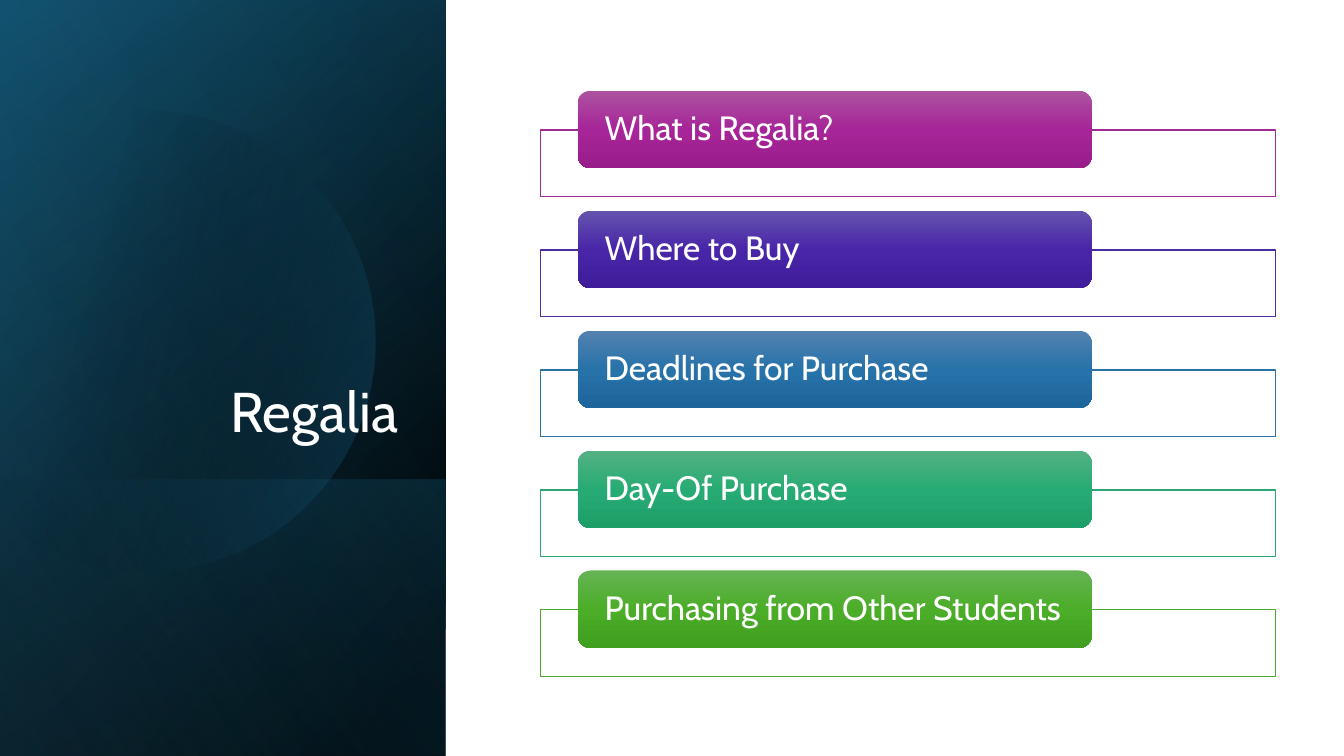
from lxml import etree
from pptx import Presentation
from pptx.dml.color import RGBColor
from pptx.enum.shapes import MSO_SHAPE as Shape
from pptx.enum.text import MSO_ANCHOR as Anchor, PP_ALIGN as Align
from pptx.oxml import parse_xml
from pptx.oxml.ns import nsdecls, qn
from pptx.util import Inches, Pt

FONT = "Cabin"
WHITE = RGBColor(0xFF, 0xFF, 0xFF)
BLACK = RGBColor(0, 0, 0)
TEAL = RGBColor(0x15, 0x60, 0x82)
DARK_TEAL = RGBColor(0x10, 0x48, 0x62)
SKY = RGBColor(0x46, 0xB1, 0xE1)

TITLE = "Regalia"

# Topic, frame colour, card gradient from top to bottom
TOPICS = [
    ("What is Regalia?", "A02B93", ("AC53A0", "A62598", "991C8B")),
    ("Where to Buy", "4B2CA2", ("6553AE", "4926A8", "3E1C9A")),
    ("Deadlines for Purchase", "2C71A4", ("5382AF", "2772A9", "1D669C")),
    ("Day-Of Purchase", "2DA573", ("54B183", "27AB74", "1E9E68")),
    ("Purchasing from Other Students", "4EA72E", ("66B354", "4BAD28", "409F1E")),
]

# Side panel layers: box, gradient stops (position %, colour, opacity %), angle
PANEL = (-1.54, 1.54, 7.5, 4.42)
PANEL_FOOT = (0.84, 3.92, 2.74, 4.42)
LAYERS_BELOW = [
    (PANEL, [(8, BLACK, 100), (100, DARK_TEAL, 100)], 50),
    (PANEL, [(0, BLACK, 0), (99, TEAL, 46)], 30),
    (PANEL_FOOT, [(2, TEAL, 29), (100, BLACK, 30)], 130),
]
LAYERS_ABOVE = [(PANEL, [(0, BLACK, 0), (99, SKY, 11)], 120)]

# Disc outline: start, then curves (three points) and lines (one point)
DISC_START = (1.49, 1.1)
DISC_SEGMENTS = [
    [(2.46, 1.12), (3.35, 1.77), (3.63, 2.75)],
    [(3.98, 3.97), (3.28, 5.23), (2.07, 5.58)],
    [(1.31, 5.8), (0.53, 5.61), (-0.03, 5.14)],
    [(-0.15, 5.03)],
    [(-0.15, 1.75)],
    [(0, 1.61)],
    [(0.23, 1.42), (0.5, 1.28), (0.8, 1.19)],
    [(1.03, 1.13), (1.26, 1.1), (1.49, 1.1)],
]
DISC_STOPS = [(29, BLACK, 0), (100, TEAL, 43)]
DISC_ANGLE = 14
CURVE_STEPS = 24

# Topic list geometry
FRAME_LEFT, FRAME_TOP, FRAME_WIDTH, FRAME_HEIGHT = 5.36, 1.29, 7.29, 0.66
CARD_LEFT, CARD_WIDTH, CARD_HEIGHT = 5.73, 5.1, 0.77
CARD_RISE = 0.39
PITCH = 1.19


def set_gradient(shape, stops, angle):
    shape.fill.background()
    marks = "".join(
        f'<a:gs pos="{pos * 1000}"><a:srgbClr val="{color}">'
        f'<a:alpha val="{opacity * 1000}"/></a:srgbClr></a:gs>'
        for pos, color, opacity in stops)
    gradient = parse_xml(
        f'<a:gradFill {nsdecls("a")} rotWithShape="1"><a:gsLst>{marks}</a:gsLst>'
        f'<a:lin ang="{angle * 60000}" scaled="0"/></a:gradFill>')
    properties = shape._element.spPr
    properties.replace(properties.find(qn("a:noFill")), gradient)
    shape.line.fill.background()
    shape.shadow.inherit = False


def add_box(slide, kind, box):
    shape = slide.shapes.add_shape(kind, *(Inches(v) for v in box))
    shape.shadow.inherit = False
    return shape


def add_layers(slide, layers):
    for box, stops, angle in layers:
        layer = add_box(slide, Shape.RECTANGLE, box)
        layer.rotation = 90
        layer._element.spPr.find(qn("a:xfrm")).set("flipH", "1")
        set_gradient(layer, stops, angle)


def bezier(p0, p1, p2, p3, t):
    u = 1 - t
    return tuple(u**3 * a + 3 * u * u * t * b + 3 * u * t * t * c + t**3 * d
                 for a, b, c, d in zip(p0, p1, p2, p3))


def add_disc(slide):
    points = [DISC_START]
    for segment in DISC_SEGMENTS:
        if len(segment) == 1:
            points += segment
        else:
            start = points[-1]
            points += [bezier(start, *segment, step / CURVE_STEPS)
                       for step in range(1, CURVE_STEPS + 1)]
    outline = [(Inches(x), Inches(y)) for x, y in points]
    builder = slide.shapes.build_freeform(*outline[0])
    builder.add_line_segments(outline[1:], close=True)
    set_gradient(builder.convert_to_shape(), DISC_STOPS, DISC_ANGLE)


def add_title(slide):
    title = slide.shapes.title
    title.left, title.top = Inches(0.64), Inches(1.84)
    title.width, title.height = Inches(3.41), Inches(2.62)
    frame = title.text_frame
    frame.text = TITLE
    frame.vertical_anchor = Anchor.BOTTOM
    style_text(frame.paragraphs[0], 40, Align.RIGHT)
    # Bring the title in front of the panel
    slide.shapes._spTree.append(title._element)


def style_text(paragraph, size, align):
    paragraph.alignment = align
    paragraph.line_spacing = 0.9
    paragraph.font.name = FONT
    paragraph.font.size = Pt(size)
    paragraph.font.color.rgb = WHITE


def add_topic(slide, index, topic, frame_color, card_colors):
    top = FRAME_TOP + index * PITCH
    frame = add_box(slide, Shape.RECTANGLE,
                    (FRAME_LEFT, top, FRAME_WIDTH, FRAME_HEIGHT))
    frame.fill.solid()
    frame.fill.fore_color.rgb = WHITE
    white = frame._element.spPr.find(qn("a:solidFill"))[0]
    etree.SubElement(white, qn("a:alpha")).set("val", "90000")
    frame.line.color.rgb = RGBColor.from_string(frame_color)
    frame.line.width = Pt(1)

    card = add_box(slide, Shape.ROUNDED_RECTANGLE,
                   (CARD_LEFT, top - CARD_RISE, CARD_WIDTH, CARD_HEIGHT))
    set_gradient(card, [(pos, color, 100)
                        for pos, color in zip((0, 50, 100), card_colors)], 90)
    label = card.text_frame
    label.word_wrap = True
    label.vertical_anchor = Anchor.MIDDLE
    label.margin_left = label.margin_right = Inches(0.23)
    label.margin_top = label.margin_bottom = 0
    label.text = topic
    style_text(label.paragraphs[0], 24, Align.LEFT)


def main():
    deck = Presentation()
    deck.slide_width, deck.slide_height = Inches(13.33), Inches(7.5)
    slide = deck.slides.add_slide(deck.slide_layouts[5])

    # Side panel with title
    add_layers(slide, LAYERS_BELOW)
    add_disc(slide)
    add_layers(slide, LAYERS_ABOVE)
    add_title(slide)

    # Topic list
    for index, topic in enumerate(TOPICS):
        add_topic(slide, index, *topic)

    deck.save("out.pptx")


if __name__ == "__main__":
    main()
